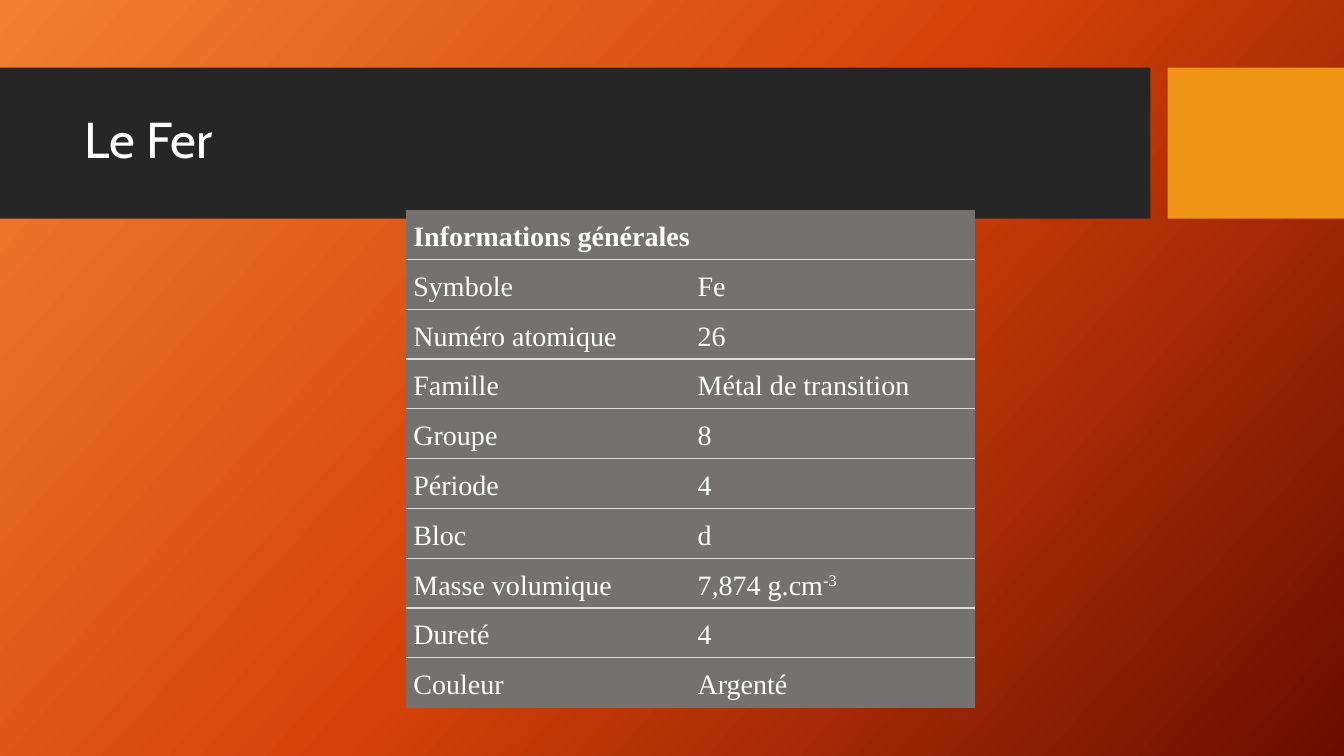
from copy import deepcopy
from dataclasses import dataclass

from lxml.etree import SubElement
from pptx import Presentation
from pptx.dml.color import RGBColor
from pptx.enum.shapes import MSO_SHAPE
from pptx.enum.text import MSO_ANCHOR, PP_ALIGN
from pptx.oxml.ns import qn
from pptx.util import Inches, Pt

NO_TABLE_STYLE = "{2D5ABB26-0587-4C30-8999-92F81FD0307C}"
GRADIENT = [(0, "F18031"), (0.5, "D54209"), (1, "6A0D00")]
HEADING = "Informations générales"


@dataclass
class Bar:
    left: float
    width: float
    color: str


@dataclass
class Property:
    label: str
    value: str
    exponent: str = ""


BARS = [Bar(0, 11.41, "262626"), Bar(11.58, 1.75, "F09415")]
PROPERTIES = [
    Property("Symbole", "Fe"),
    Property("Numéro atomique", "26"),
    Property("Famille", "Métal de transition"),
    Property("Groupe", "8"),
    Property("Période", "4"),
    Property("Bloc", "d"),
    Property("Masse volumique", "7,874 g.cm", "-3"),
    Property("Dureté", "4"),
    Property("Couleur", "Argenté"),
]


def rgb(color: str) -> RGBColor:
    return RGBColor.from_string(color)


def set_attributes(target, **values) -> None:
    for name, value in values.items():
        setattr(target, name, value)


def add_run(p, text: str, font: str, size: int, bold: bool = False):
    r = p.add_run()
    r.text = text
    set_attributes(r.font, name=font, size=Pt(size), bold=bold)
    r.font.color.rgb = rgb("FFFFFF")
    return r


def paint_background(s) -> None:
    fill = s.background.fill
    fill.gradient()
    fill.gradient_angle = 360 - 42  # counter-clockwise
    stops = s.element.find(".//" + qn("a:gsLst"))
    stops.append(deepcopy(stops[-1]))
    for stop, (position, color) in zip(fill.gradient_stops, GRADIENT):
        stop.position = position
        stop.color.rgb = rgb(color)


def add_bar(s, bar: Bar) -> None:
    sp = s.shapes.add_shape(MSO_SHAPE.RECTANGLE, Inches(bar.left), Inches(0.67),
                            Inches(bar.width), Inches(1.5))
    sp.shadow.inherit = False
    sp.fill.solid()
    sp.fill.fore_color.rgb = rgb(bar.color)
    sp.line.fill.background()


def add_title(s, text: str) -> None:
    title = s.shapes.title
    set_attributes(title, left=Inches(0.74), top=Inches(0.82),
                   width=Inches(10.51), height=Inches(1.18))
    s.shapes.element.append(title.element)  # in front of the bars
    title.text_frame.vertical_anchor = MSO_ANCHOR.MIDDLE
    p = title.text_frame.paragraphs[0]
    set_attributes(p, alignment=PP_ALIGN.LEFT, line_spacing=0.9)
    add_run(p, text, "Cabin", 36)


def add_rule(cell, side: str) -> None:
    """Draw a thin grey border on one side (a:lnT or a:lnB) of a cell."""
    tc_pr = cell._tc.get_or_add_tcPr()
    ln = SubElement(tc_pr, qn(side), w=str(Pt(1)))
    fill = SubElement(ln, qn("a:solidFill"))
    SubElement(fill, qn("a:srgbClr"), val="DDDDDD")


def fill_cell(cell, text: str, rules: list[str], exponent: str = "",
              bold: bool = False) -> None:
    margin = Inches(0.07)
    set_attributes(cell, margin_left=margin, margin_right=margin,
                   margin_top=margin, margin_bottom=margin,
                   vertical_anchor=MSO_ANCHOR.MIDDLE)
    for side in rules:
        add_rule(cell, side)
    cell.fill.solid()
    cell.fill.fore_color.rgb = rgb("767171")
    p = cell.text_frame.paragraphs[0]
    p.line_spacing = 1.15
    if text:
        add_run(p, text, "Times New Roman", 20, bold)
    if exponent:
        r = add_run(p, exponent, "Times New Roman", 20)
        r.font._element.set("baseline", "30000")


def add_properties_table(s) -> None:
    rows = [Property(HEADING, ""), *PROPERTIES]
    frame = s.shapes.add_table(len(rows), 2, Inches(4.03), Inches(2.08),
                               Inches(5.64), Inches(0.49 * len(rows)))
    table = frame.table
    set_attributes(table, first_row=False, horz_banding=False)
    table._tbl.tblPr.find(qn("a:tableStyleId")).text = NO_TABLE_STYLE
    for i, row in enumerate(rows):
        rules = ["a:lnT"] if i > 0 else []
        if i < len(rows) - 1:
            rules.append("a:lnB")
        fill_cell(table.cell(i, 0), row.label, rules, bold=i == 0)
        fill_cell(table.cell(i, 1), row.value, rules, row.exponent)
    table.cell(0, 0).merge(table.cell(0, 1))


def main() -> None:
    prs = Presentation()
    set_attributes(prs, slide_width=Inches(13.33), slide_height=Inches(7.5))
    s = prs.slides.add_slide(prs.slide_layouts[5])
    paint_background(s)
    for bar in BARS:
        add_bar(s, bar)
    add_title(s, "Le Fer")
    add_properties_table(s)
    prs.save("out.pptx")


if __name__ == "__main__":
    main()
